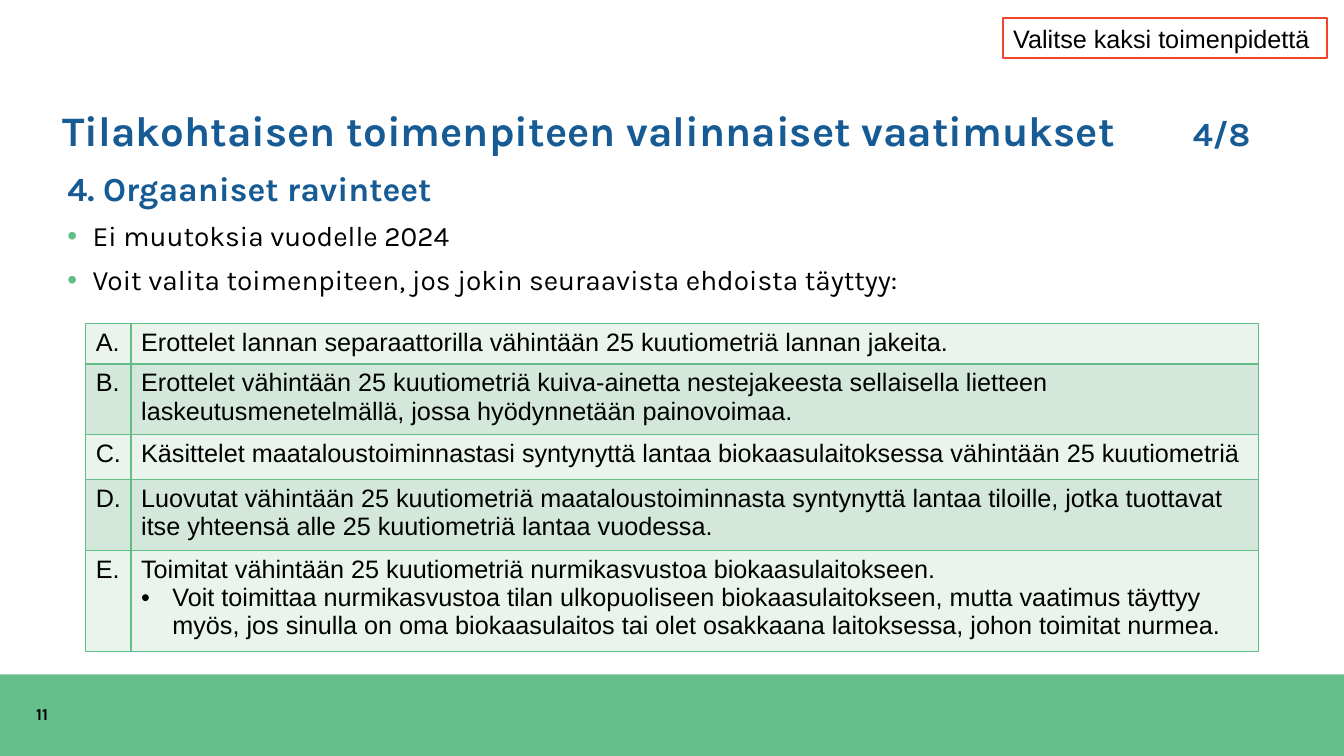
from dataclasses import dataclass
from typing import Any

from lxml import etree
from pptx import Presentation
from pptx import util as u
from pptx.dml.color import RGBColor
from pptx.enum import shapes, text
from pptx.oxml import ns

BLUE = RGBColor(0x16, 0x5B, 0x94)
BLACK = RGBColor(0, 0, 0)
BAND = RGBColor(0x64, 0xBF, 0x8A)
GREEN = RGBColor(0x63, 0xBD, 0x88)
RED = RGBColor(0xF1, 0x44, 0x2A)
ROW_FILLS = (RGBColor(0xEA, 0xF4, 0xED), RGBColor(0xD3, 0xE8, 0xDA))


@dataclass
class Style:
    size: int
    name: str = "Karla"
    bold: bool = False
    color: RGBColor = BLACK


@dataclass
class Line:
    content: str
    style: Style
    indent: float = 0
    bullet_color: RGBColor = BLACK
    format: dict[str, Any] | None = None


@dataclass
class Row:
    height: float
    letter: str
    lines: list[Line]


HEADING = Style(24, bold=True, color=BLUE)
BODY = Style(20)
CELL = Style(18, "Arial")
TIGHT = {"line_spacing": 0.9}
SPACED = {"line_spacing": 0.9, "space_before": u.Pt(10)}

INTRO = [
    Line("4. Orgaaniset ravinteet", HEADING, format=TIGHT),
    Line("Ei muutoksia vuodelle 2024", BODY, 0.25, GREEN, SPACED),
    Line("Voit valita toimenpiteen, jos jokin seuraavista ehdoista täyttyy:",
         BODY, 0.25, GREEN, SPACED),
]
CONDITIONS = [
    Row(0.4, "A.", [Line("Erottelet lannan separaattorilla vähintään 25 kuutiometriä "
                         "lannan jakeita.", CELL)]),
    Row(0.7, "B.", [Line("Erottelet vähintään 25 kuutiometriä kuiva-ainetta nestejakeesta "
                         "sellaisella lietteen laskeutusmenetelmällä, jossa hyödynnetään "
                         "painovoimaa.", CELL)]),
    Row(0.45, "C.", [Line("Käsittelet maataloustoiminnastasi syntynyttä lantaa "
                          "biokaasulaitoksessa vähintään 25 kuutiometriä", CELL)]),
    Row(0.7, "D.", [Line("Luovutat vähintään 25 kuutiometriä maataloustoiminnasta syntynyttä "
                         "lantaa tiloille, jotka tuottavat itse yhteensä alle 25 kuutiometriä "
                         "lantaa vuodessa.", CELL)]),
    Row(1.0, "E.", [Line("Toimitat vähintään 25 kuutiometriä nurmikasvustoa "
                         "biokaasulaitokseen.", CELL),
                    Line("Voit toimittaa nurmikasvustoa tilan ulkopuoliseen "
                         "biokaasulaitokseen, mutta vaatimus täyttyy myös, jos sinulla on oma "
                         "biokaasulaitos tai olet osakkaana laitoksessa, johon toimitat "
                         "nurmea.", CELL, 0.31)]),
]


def box(*lengths: float) -> list[u.Length]:
    return [u.Inches(length) for length in lengths]


def add_run(p, content: str, style: Style) -> None:
    r = p.add_run()
    r.text = content
    for key in ("size", "name", "bold"):
        value = getattr(style, key)
        setattr(r.font, key, u.Pt(value) if key == "size" else value)
    r.font.color.rgb = style.color


def add_child(parent, tag: str, **attributes: str):
    return etree.SubElement(parent, ns.qn(tag), attributes)


def write_lines(tf, lines: list[Line]) -> None:
    tf.word_wrap = True
    for i, line in enumerate(lines):
        p = tf.add_paragraph() if i else tf.paragraphs[0]
        p.alignment = text.PP_ALIGN.LEFT
        if line.indent:
            pPr = p._p.get_or_add_pPr()
            indent = u.Inches(line.indent)
            pPr.set("marL", str(indent))
            pPr.set("indent", str(-indent))
            color = add_child(pPr, "a:buClr")
            add_child(color, "a:srgbClr", val=str(line.bullet_color))
            add_child(pPr, "a:buFont", typeface="Arial")
            add_child(pPr, "a:buChar", char="•")
        for key, value in (line.format or {}).items():
            setattr(p, key, value)
        add_run(p, line.content, line.style)


def add_text(s, at: list[u.Length], lines: list[Line]) -> None:
    write_lines(s.shapes.add_textbox(*at).text_frame, lines)


def add_rect(s, at: list[u.Length]):
    sp = s.shapes.add_shape(shapes.MSO_SHAPE.RECTANGLE, *at)
    sp.shadow.inherit = False
    return sp


def fill_title(s) -> None:
    title = s.shapes.title
    for key, value in zip(("left", "top", "width", "height"), box(0.52, 0.63, 12.15, 1.38)):
        setattr(title, key, value)
    tf = title.text_frame
    for key, value in {"word_wrap": True, "auto_size": text.MSO_AUTO_SIZE.NONE,
                       "vertical_anchor": text.MSO_ANCHOR.MIDDLE}.items():
        setattr(tf, key, value)
    p = tf.paragraphs[0]
    tabs = add_child(p._p.get_or_add_pPr(), "a:tabLst")
    add_child(tabs, "a:tab", pos=str(u.Inches(11.21)), algn="l")
    p.alignment = text.PP_ALIGN.LEFT
    p.line_spacing = 0.9
    add_run(p, "Tilakohtaisen toimenpiteen valinnaiset vaatimukset\t",
            Style(30, bold=True, color=BLUE))
    add_run(p, "4/8", HEADING)


def format_cell(cell, lines: list[Line], fill: RGBColor) -> None:
    write_lines(cell.text_frame, lines)
    tcPr = cell._tc.get_or_add_tcPr()
    for side in ("L", "R", "T", "B"):
        border = add_child(tcPr, f"a:ln{side}", w=str(u.Pt(1)))
        add_child(add_child(border, "a:solidFill"), "a:srgbClr", val=str(GREEN))
    cell.fill.solid()
    cell.fill.fore_color.rgb = fill


def add_conditions(s) -> None:
    height = sum(row.height for row in CONDITIONS)
    table = s.shapes.add_table(len(CONDITIONS), 2, *box(0.85, 3.21, 11.63, height)).table
    table.first_row = False
    table.horz_banding = False
    for column, width in zip(table.columns, box(0.45, 11.18)):
        column.width = width
    for i, row in enumerate(CONDITIONS):
        table.rows[i].height = u.Inches(row.height)
        for j, lines in enumerate(([Line(row.letter, CELL)], row.lines)):
            format_cell(table.cell(i, j), lines, ROW_FILLS[i % 2])


def main() -> None:
    prs = Presentation()
    prs.slide_width, prs.slide_height = box(13.33, 7.5)
    s = prs.slides.add_slide(prs.slide_layouts[5])

    # Footer band and page number
    band = add_rect(s, box(0, 6.69, 13.33, 0.81))
    band.fill.solid()
    band.fill.fore_color.rgb = BAND
    band.line.fill.background()
    add_text(s, box(0.26, 6.93, 0.87, 0.3), [Line("11", Style(12, bold=True))])

    # Title and introduction
    fill_title(s)
    add_text(s, box(0.57, 1.66, 12.31, 5.04), INTRO)

    # Instruction in the corner
    note = add_rect(s, box(9.95, 0.18, 3.21, 0.4))
    note.fill.background()
    note.line.color.rgb = RED
    note.line.width = u.Pt(1.5)
    write_lines(note.text_frame, [Line("Valitse kaksi toimenpidettä", CELL)])

    # Conditions
    add_conditions(s)
    prs.save("out.pptx")


if __name__ == "__main__":
    main()
